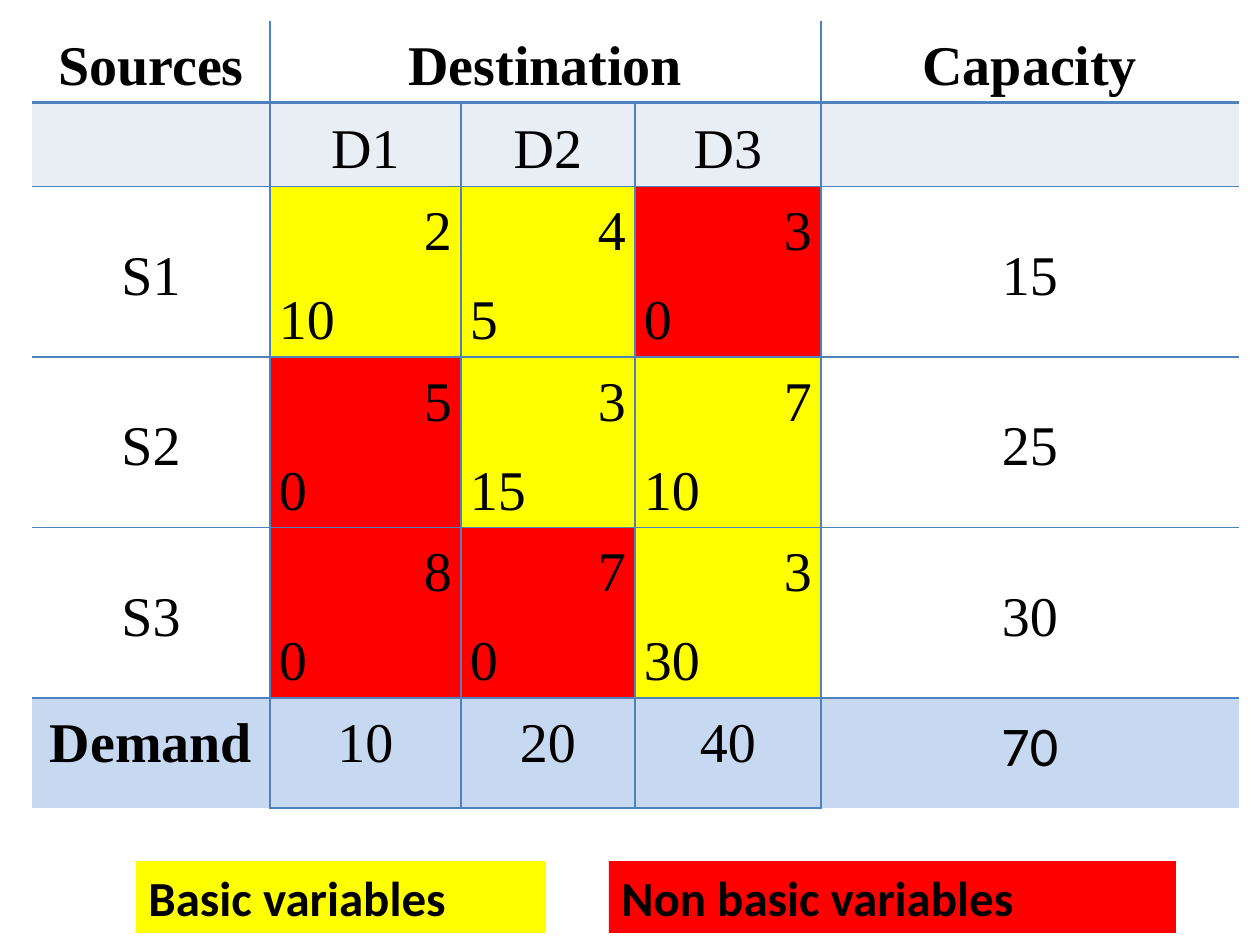
from lxml import etree
from pptx import Presentation
from pptx.dml.color import RGBColor
from pptx.enum.text import MSO_ANCHOR, MSO_AUTO_SIZE, PP_ALIGN
from pptx.oxml.ns import qn
from pptx.util import Pt

LEFT, CENTER, RIGHT = PP_ALIGN.LEFT, PP_ALIGN.CENTER, PP_ALIGN.RIGHT
TOP, MIDDLE = MSO_ANCHOR.TOP, MSO_ANCHOR.MIDDLE
GROW = MSO_AUTO_SIZE.SHAPE_TO_FIT_TEXT
SCALE = 914400 / 126
COLORS = {"line": "4F81BD", "head": "E9EDF4", "demand": "C6D9F1", "white": "FFFFFF",
          "basic": "FFFF00", "nonbasic": "FF0000", "text": "000000"}


def px(length):
    return round(length * SCALE)


def add_span(para, text, font, size, bold):
    span = para.add_run()
    span.text = text
    span.font.name = font
    span.font.size = Pt(size)
    span.font.bold = bold
    span.font.color.rgb = RGBColor.from_string(COLORS["text"])


deck = Presentation()
deck.slide_width, deck.slide_height = px(1260), px(945)
page = deck.slides.add_slide(deck.slide_layouts[6])

# Transportation table: a (cost, allocation) pair fills each route cell
column_widths = [238, 191, 174, 186, 418]
row_heights = [79, 84, 170, 170, 170, 110]
rows = [
    ["Sources", "Destination", "", "", "Capacity"],
    ["", "D1", "D2", "D3", ""],
    ["S1", ("2", "10"), ("4", "5"), ("3", "0"), "15"],
    ["S2", ("5", "0"), ("3", "15"), ("7", "10"), "25"],
    ["S3", ("8", "0"), ("7", "0"), ("3", "30"), "30"],
    ["Demand", "10", "20", "40", "70"],
]
row_fills = [None, "head", None, None, "white", "demand"]
last_row, last_column = len(rows) - 1, len(column_widths) - 1

table = page.shapes.add_table(len(rows), len(column_widths), px(32), px(21),
                              px(sum(column_widths)), px(sum(row_heights))).table
table.first_row = table.horz_banding = False
for column, width in zip(table.columns, column_widths):
    column.width = px(width)
for row, height in zip(table.rows, row_heights):
    row.height = px(height)
table.cell(0, 1).merge(table.cell(0, 3))

for r, values in enumerate(rows):
    for c, value in enumerate(values):
        cell = table.cell(r, c)
        is_route = isinstance(value, tuple)
        cell.margin_left = cell.margin_right = px(9)
        cell.margin_top = cell.margin_bottom = px(5)
        cell.vertical_anchor = TOP if is_route or r == last_row else MIDDLE

        # Borders: inner grid, heavier under the header, open outer edges
        inner_column = 0 < c < last_column
        borders = {
            "a:lnL": 1 if c > 0 else 0,
            "a:lnR": 1 if c < last_column else 0,
            "a:lnT": {0: 0, 1: 2.25}.get(r, 1),
            "a:lnB": 2.25 if r == 0 else 1 if r < last_row or inner_column else 0,
        }
        properties = cell._tc.get_or_add_tcPr()
        for tag, weight in borders.items():
            line = etree.SubElement(properties, qn(tag), w=str(Pt(weight)))
            if weight:
                paint = etree.SubElement(line, qn("a:solidFill"))
                etree.SubElement(paint, qn("a:srgbClr"), val=COLORS["line"])
            else:
                etree.SubElement(line, qn("a:noFill"))

        # Fill: routes with no allocation are non basic
        fill = row_fills[r]
        if is_route:
            fill = "nonbasic" if value[1] == "0" else "basic"
        if fill:
            cell.fill.solid()
            cell.fill.fore_color.rgb = RGBColor.from_string(COLORS[fill])
        else:
            cell.fill.background()

        # Text
        lines = zip(value, (RIGHT, LEFT)) if is_route else [(value, CENTER)]
        font = "Calibri" if (r, c) == (last_row, last_column) else "Times New Roman"
        for i, (text, alignment) in enumerate(lines):
            if not text:
                continue
            para = cell.text_frame.add_paragraph() if i else cell.text_frame.paragraphs[0]
            para.alignment = alignment
            para.line_spacing = 1.15
            para.space_after = Pt(10)
            add_span(para, text, font, 32, r == 0 or value == "Demand")

# Legend
for text, fill, left, width in [("Basic variables", "basic", 136, 410),
                                ("Non basic variables", "nonbasic", 609, 567)]:
    box = page.shapes.add_textbox(px(left), px(861), px(width), px(72))
    box.fill.solid()
    box.fill.fore_color.rgb = RGBColor.from_string(COLORS[fill])
    box.text_frame.word_wrap = True
    box.text_frame.auto_size = GROW
    add_span(box.text_frame.paragraphs[0], text, "Calibri", 28, True)

deck.save("out.pptx")
